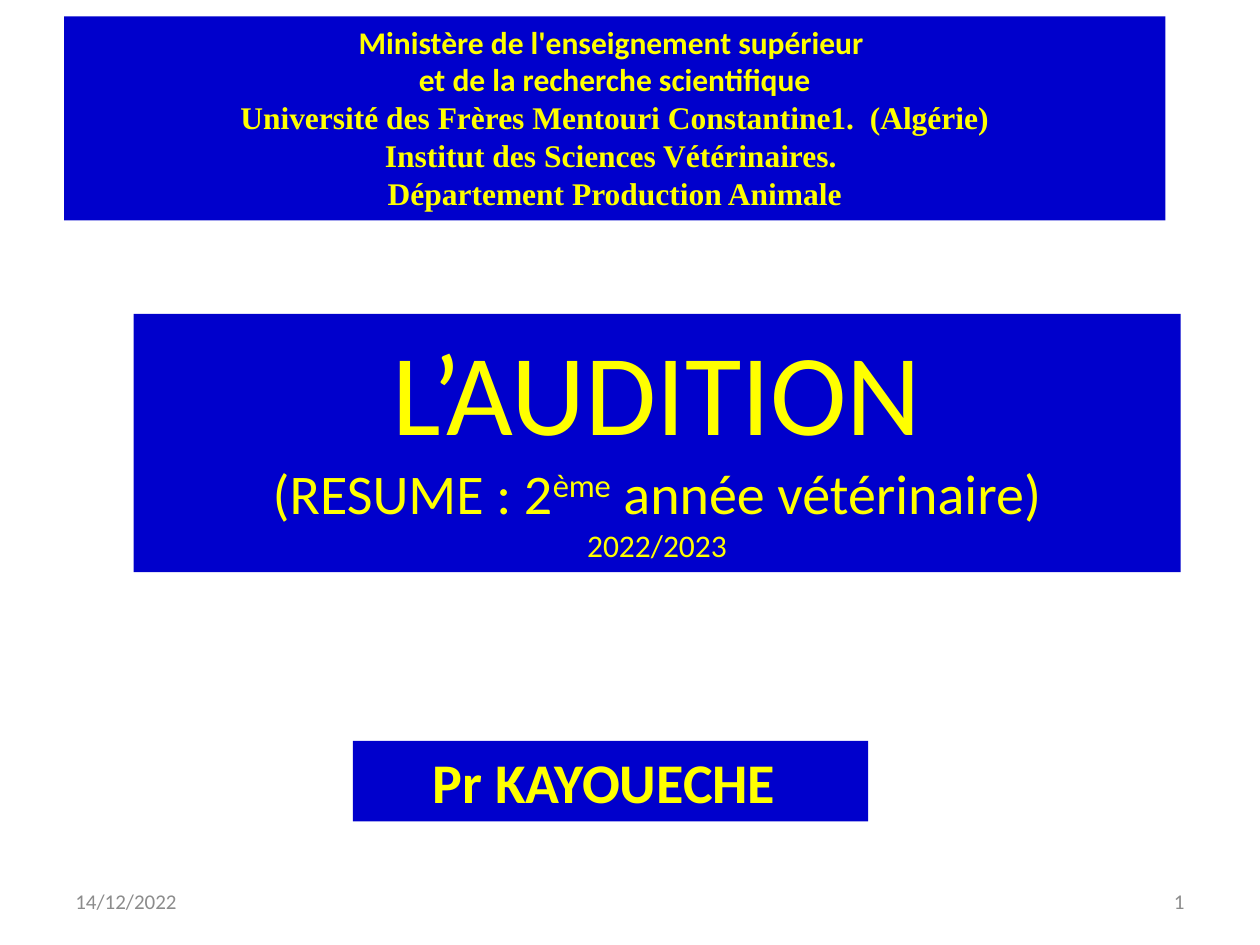
from pptx import Presentation
from pptx.dml.color import RGBColor
from pptx.enum.text import MSO_ANCHOR, MSO_AUTO_SIZE, PP_ALIGN
from pptx.util import Inches, Pt

COLORS = {"panel": "0000CC", "text": "FFFF00", "footer": "8C8C8C"}
SANS, SERIF = "Calibri", "Times New Roman"

TITLE = {
    "box": (1.06, 2.49, 8.31, 2.05),
    "bold": False,
    "paragraphs": [
        (66, SANS, ["L’AUDITION"]),
        (32, SANS, ["(RESUME : 2", "^ème", " année vétérinaire)"]),
        (18, SANS, ["2022/2023"]),
    ],
}
AUTHOR = {
    "box": (2.8, 5.88, 4.09, 0.64),
    "bold": True,
    "paragraphs": [(32, SANS, ["Pr KAYOUECHE "])],
}
INSTITUTION = {
    "box": (0.51, 0.13, 8.74, 1.62),
    "bold": True,
    "paragraphs": [
        (18, SANS, ["Ministère de l'enseignement supérieur ", "\n",
                    "et de la recherche scientifique"]),
        (18, SERIF, ["Université des Frères Mentouri Constantine1.  (Algérie)"]),
        (18, SERIF, ["Institut des Sciences Vétérinaires. "]),
        (18, SERIF, ["Département Production Animale"]),
    ],
}
FOOTERS = [
    ((0.5, 6.95, 2.33, 0.4), "14/12/2022", PP_ALIGN.LEFT),
    ((7.17, 6.95, 2.33, 0.4), "1", PP_ALIGN.RIGHT),
]


def add_run(paragraph, text, size, font_name, color, bold=False):
    run = paragraph.add_run()
    run.text = text.removeprefix("^")
    run.font.size = Pt(size)
    run.font.name = font_name
    run.font.bold = bold
    run.font.color.rgb = RGBColor.from_string(COLORS[color])
    if text.startswith("^"):
        run.font._element.set("baseline", "30000")


def fill_panel(shape, panel):
    shape.left, shape.top, shape.width, shape.height = map(Inches, panel["box"])
    shape.fill.solid()
    shape.fill.fore_color.rgb = RGBColor.from_string(COLORS["panel"])
    frame = shape.text_frame
    frame.word_wrap = True
    frame.auto_size = MSO_AUTO_SIZE.SHAPE_TO_FIT_TEXT
    frame.vertical_anchor = MSO_ANCHOR.TOP
    for index, (size, font_name, texts) in enumerate(panel["paragraphs"]):
        paragraph = frame.add_paragraph() if index else frame.paragraphs[0]
        paragraph.alignment = PP_ALIGN.CENTER
        for text in texts:
            if text == "\n":
                paragraph.add_line_break()
            else:
                add_run(paragraph, text, size, font_name, "text", panel["bold"])


def add_footer(slide, box, text, alignment):
    frame = slide.shapes.add_textbox(*map(Inches, box)).text_frame
    frame.word_wrap = True
    frame.vertical_anchor = MSO_ANCHOR.MIDDLE
    frame.paragraphs[0].alignment = alignment
    add_run(frame.paragraphs[0], text, 12, SANS, "footer")


def main():
    """Build the opening slide of the hearing course."""
    presentation = Presentation()
    presentation.slide_width, presentation.slide_height = Inches(10), Inches(7.5)
    slide = presentation.slides.add_slide(presentation.slide_layouts[5])
    fill_panel(slide.shapes.title, TITLE)
    for panel in (AUTHOR, INSTITUTION):
        fill_panel(slide.shapes.add_textbox(*map(Inches, panel["box"])), panel)
    for footer in FOOTERS:
        add_footer(slide, *footer)
    presentation.save("out.pptx")


if __name__ == "__main__":
    main()
